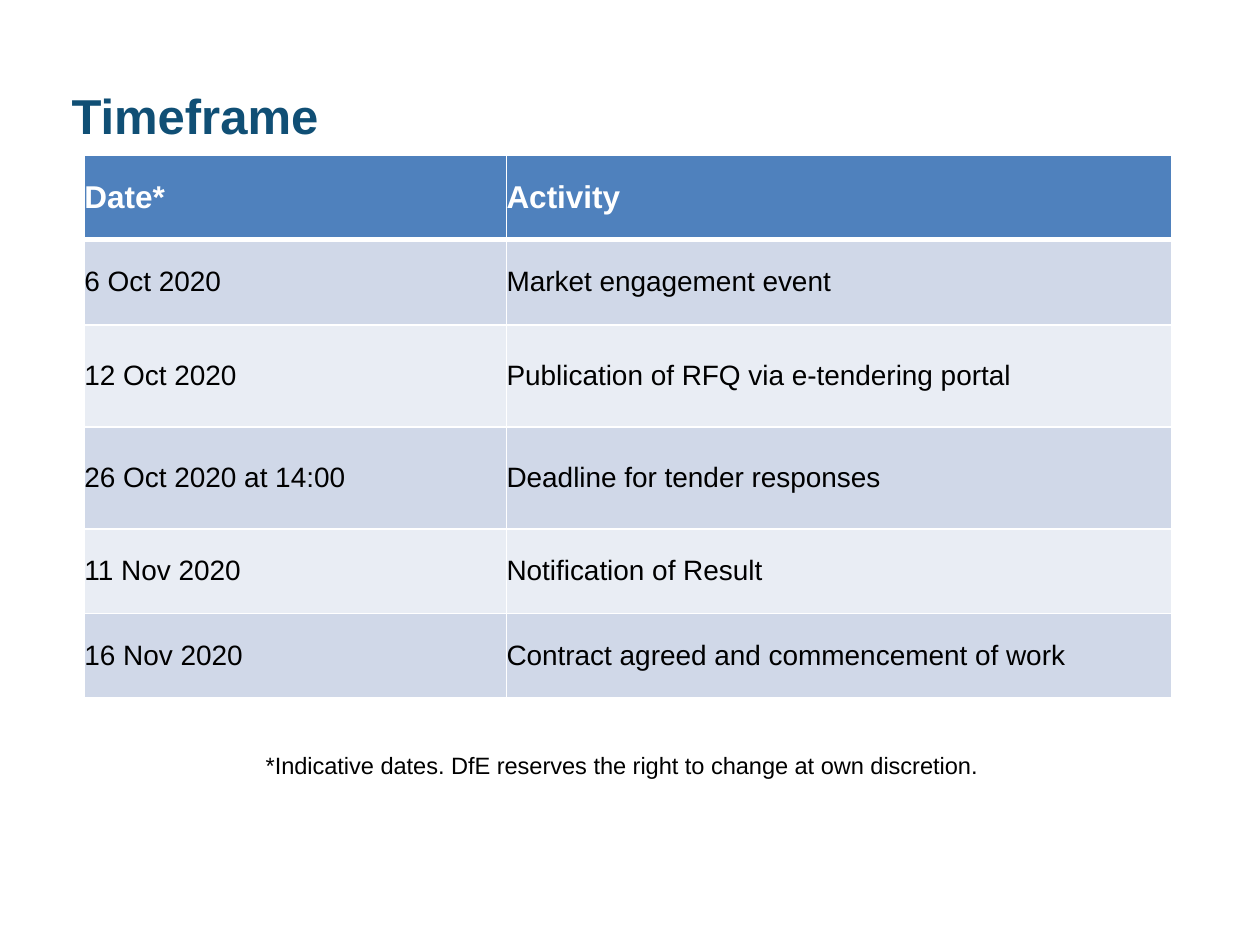
from lxml.etree import SubElement
from pptx import Presentation
from pptx.dml.color import RGBColor
from pptx.enum.text import MSO_ANCHOR
from pptx.oxml.ns import qn
from pptx.util import Inches, Pt

COLORS = {
    "title": "104F75",
    "head": "4F81BD",
    "odd": "D0D8E8",
    "even": "E9EDF4",
    "white": "FFFFFF",
    "black": "000000",
}
DATES = [
    ("Date*", "Activity"),
    ("6 Oct 2020", "Market engagement event"),
    ("12 Oct 2020", "Publication of RFQ via e-tendering portal"),
    ("26 Oct 2020 at 14:00", "Deadline for tender responses"),
    ("11 Nov 2020", "Notification of Result"),
    ("16 Nov 2020", "Contract agreed and commencement of work"),
]
WIDTHS = [3.35, 5.28]
HEIGHTS = [0.67, 0.68, 0.81, 0.81, 0.67, 0.67]


def color(name):
    return RGBColor.from_string(COLORS[name])


def write(frame, text, size, tone, bold=False):
    frame.text = text
    font = frame.paragraphs[0].font
    font.name = "Arial"
    font.size = Pt(size)
    font.bold = bold
    font.color.rgb = color(tone)


def add_text(slide, box, text, size, tone, bold=False):
    shape = slide.shapes.add_textbox(*map(Inches, box))
    frame = shape.text_frame
    frame.word_wrap = True
    frame.vertical_anchor = MSO_ANCHOR.MIDDLE if bold else MSO_ANCHOR.TOP
    write(frame, text, size, tone, bold)
    return shape


def add_note(slide, box):
    shape = add_text(
        slide, box,
        "*Indicative dates. DfE reserves the right to change at own discretion.",
        13.5, "black",
    )
    shape.fill.solid()
    shape.fill.fore_color.rgb = color("white")


def add_edges(cell, row):
    props = cell._tc.get_or_add_tcPr()
    thick = {0: "lnB", 1: "lnT"}.get(row)
    for side in ("lnL", "lnR", "lnT", "lnB"):
        width = Pt(3 if side == thick else 1)
        line = SubElement(props, qn(f"a:{side}"), w=str(width))
        fill = SubElement(line, qn("a:solidFill"))
        SubElement(fill, qn("a:srgbClr"), val=COLORS["white"])


def fill_cell(cell, text, row):
    head = row == 0
    cell.margin_left = cell.margin_right = 0
    cell.margin_top = cell.margin_bottom = 0
    cell.vertical_anchor = MSO_ANCHOR.MIDDLE
    add_edges(cell, row)
    cell.fill.solid()
    cell.fill.fore_color.rgb = color("head" if head else ("even", "odd")[row % 2])
    write(cell.text_frame, text, 18 if head else 16, "white" if head else "black", head)


def add_dates(slide, box):
    shape = slide.shapes.add_table(len(DATES), len(WIDTHS), *map(Inches, box))
    table = shape.table
    for column, width in zip(table.columns, WIDTHS):
        column.width = Inches(width)
    for row, height in zip(table.rows, HEIGHTS):
        row.height = Inches(height)
    for row, texts in enumerate(DATES):
        for col, text in enumerate(texts):
            fill_cell(table.cell(row, col), text, row)


def main():
    deck = Presentation()
    deck.slide_width = Inches(10)
    deck.slide_height = Inches(7.5)
    slide = deck.slides.add_slide(deck.slide_layouts[6])
    add_note(slide, (2.01, 5.91, 6.85, 0.33))
    add_dates(slide, (0.67, 1.23, sum(WIDTHS), sum(HEIGHTS)))
    add_text(slide, (0.47, 0.11, 8.39, 1.61), "Timeframe", 28, "title", True)
    deck.save("out.pptx")


if __name__ == "__main__":
    main()
